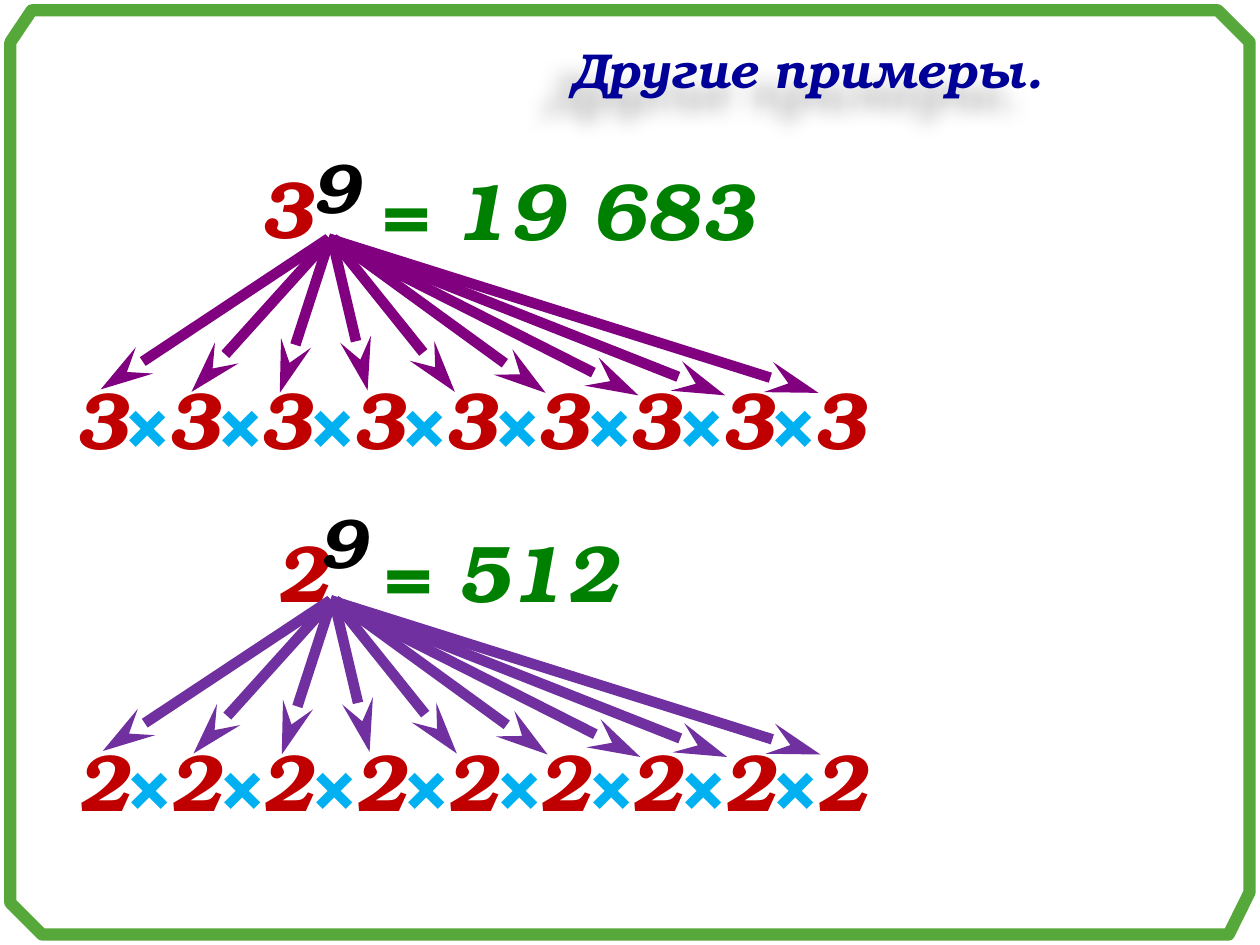
from lxml import etree
from pptx import Presentation
from pptx.dml.color import RGBColor
from pptx.enum.shapes import MSO_CONNECTOR, MSO_SHAPE
from pptx.enum.text import MSO_ANCHOR, MSO_AUTO_SIZE, PP_ALIGN
from pptx.oxml.ns import qn
from pptx.util import Cm, Pt

LINE = MSO_CONNECTOR.STRAIGHT
CALLOUT = MSO_SHAPE.ROUNDED_RECTANGULAR_CALLOUT
CENTER, LEFT = PP_ALIGN.CENTER, PP_ALIGN.LEFT
TOP = MSO_ANCHOR.TOP
GROW, FIXED = MSO_AUTO_SIZE.SHAPE_TO_FIT_TEXT, MSO_AUTO_SIZE.NONE

# Content: all places are in centimetres
FONT = "TeX Gyre Bonum"
RED, BLUE, GREEN, BLACK = "C00000", "00B0F0", "008000", "000000"
TITLE = "Другие примеры."
COUNT = 9
POWERS = [
    {"base": "3", "base_at": (4.99, 3.07), "exp_at": (6.05, 2.77),
     "value": "= 19 683", "value_at": (7.39, 3.1), "width": 8.18,
     "color": "800080", "shift": (0, 0)},
    {"base": "2", "base_at": (5.31, 10.39), "exp_at": (6.2, 9.93),
     "value": "= 512", "value_at": (7.42, 10.39), "width": 5.38,
     "color": "7030A0", "shift": (0.04, 7.29)},
]
# Row of factors and its fan of arrows, before the shift
ROW_X, ROW_Y, STEP, SIGN_DX = 1.25, 7.32, 1.86, 0.92
FAN_Y = 4.81
ARROWS = [  # start x, end x, end y
    (6.62, 2.03, 7.85), (6.65, 3.86, 7.9), (6.65, 5.64, 7.92),
    (6.69, 7.41, 7.87), (6.69, 9.17, 7.9), (6.72, 11, 7.92),
    (6.62, 12.87, 7.97), (6.62, 14.62, 7.97), (6.62, 16.5, 7.92),
]
FRAME = [(0.21, 0.85), (0.21, 18.2), (0.85, 18.84), (24.77, 18.84),
         (25.19, 17.99), (25.19, 0.85), (24.55, 0.21), (0.64, 0.21)]

deck = Presentation()
deck.slide_width, deck.slide_height = Cm(25.4), Cm(19.05)
slide = deck.slides.add_slide(deck.slide_layouts[6])
shapes = slide.shapes


def rgb(code):
    return RGBColor.from_string(code)


def write(shape, text, size=46, color=RED, align=LEFT, wrap=False, fit=GROW):
    frame = shape.text_frame
    frame.word_wrap, frame.auto_size = wrap, fit
    frame.vertical_anchor = TOP
    para = frame.paragraphs[0]
    para.alignment = align
    run = para.add_run()
    run.text = text
    font = run.font
    font.name, font.size = FONT, Pt(size)
    font.bold = font.italic = True
    font.color.rgb = rgb(color)


def label(text, x, y, w=1.63, h=2.24, **style):
    write(shapes.add_textbox(Cm(x), Cm(y), Cm(w), Cm(h)), text, **style)


def arrow(x1, y1, x2, y2, color):
    line = shapes.add_connector(LINE, Cm(x1), Cm(y1), Cm(x2), Cm(y2))
    line.line.color.rgb = rgb(color)
    line.line.width = Pt(6)
    etree.SubElement(line.line._get_or_add_ln(), qn("a:tailEnd"),
                     type="stealth", w="med", len="lg")
    etree.SubElement(line._element.spPr, qn("a:effectLst"))


# Powers, their factors and arrows
for power in POWERS:
    dx, dy = power["shift"]
    spots = [ROW_X + dx + i * STEP for i in range(COUNT)]
    for x in spots:
        label(power["base"], x, ROW_Y + dy)
    for x in spots[:-1]:
        label("×", x + SIGN_DX, ROW_Y + dy, w=1.45, h=2.21, color=BLUE)
    label(power["base"], *power["base_at"])
    label(str(COUNT), *power["exp_at"], w=1.47, h=1.96, size=40, color=BLACK)
    for start, end, low in ARROWS:
        arrow(start + dx, FAN_Y + dy, end + dx, low + dy, power["color"])
    label(power["value"], *power["value_at"], w=power["width"], color=GREEN)

# Frame with cut corners
points = [(Cm(x), Cm(y)) for x, y in FRAME]
path = shapes.build_freeform(*points[0])
path.add_line_segments(points[1:], close=True)
border = path.convert_to_shape()
border.shadow.inherit = False
border.fill.background()
border.line.color.rgb = rgb("55A839")
border.line.width = Pt(7)

# Title with a soft shadow under its letters
title = shapes.add_shape(CALLOUT, Cm(8.94), Cm(0.58), Cm(15.01), Cm(1.98))
for i, value in enumerate((0.21, 2.81, 0.17)):
    title.adjustments[i] = value
title.fill.background()
title.line.fill.background()
title.shadow.inherit = False
effects = title._element.spPr.find(qn("a:effectLst"))
shadow = etree.SubElement(effects, qn("a:outerShdw"), blurRad=str(Pt(12)),
                          dist=str(Pt(19)), dir="8400000", algn="ctr",
                          rotWithShape="0")
tint = etree.SubElement(shadow, qn("a:srgbClr"), val=BLACK)
etree.SubElement(tint, qn("a:alpha"), val="28000")
write(title, TITLE, size=28, color="000099", align=CENTER, wrap=True,
      fit=FIXED)
title.text_frame.margin_right = Cm(0.61)

deck.save("out.pptx")
